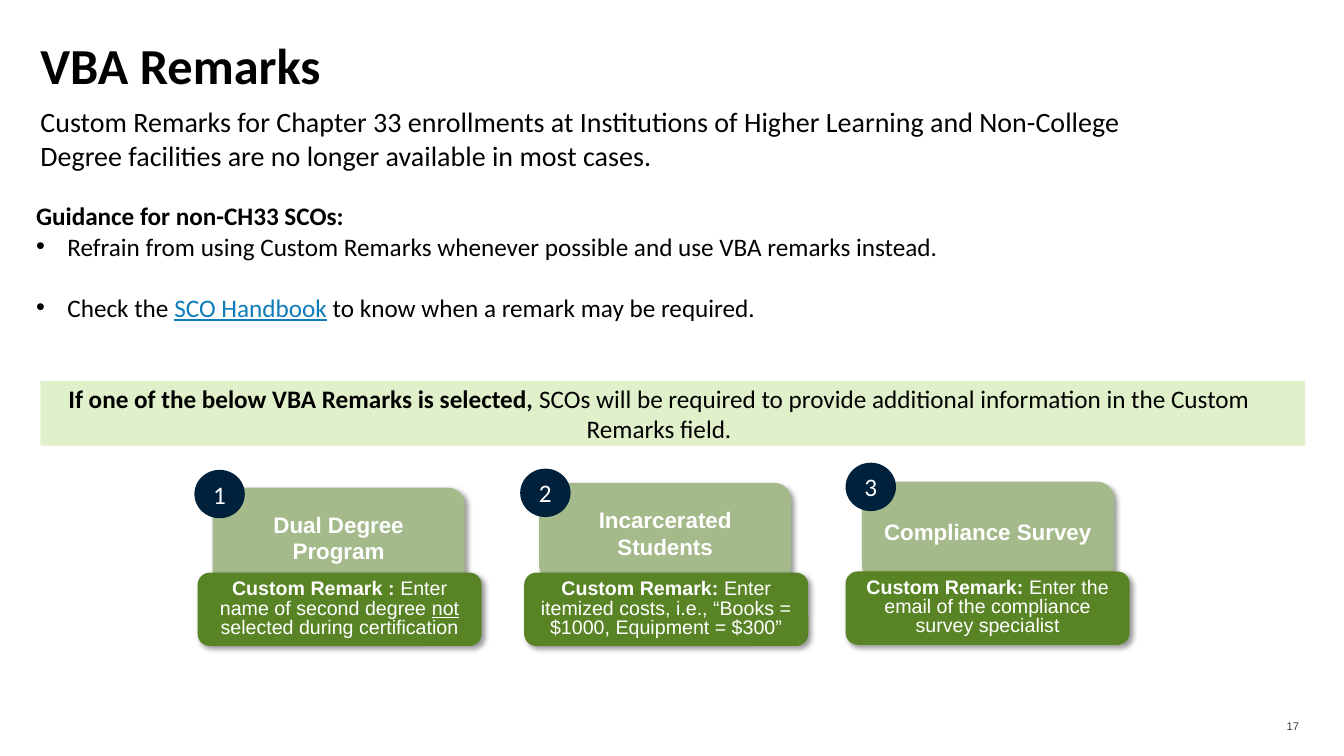
from lxml import etree
from pptx import Presentation
from pptx.dml.color import RGBColor
from pptx.enum.shapes import MSO_SHAPE
from pptx.enum.text import MSO_ANCHOR, PP_ALIGN
from pptx.oxml.ns import qn
from pptx.util import Cm, Pt

RECT, ROUNDED = MSO_SHAPE.RECTANGLE, MSO_SHAPE.ROUNDED_RECTANGLE
BADGE = MSO_SHAPE.FLOWCHART_CONNECTOR
LEFT, CENTER, RIGHT = PP_ALIGN.LEFT, PP_ALIGN.CENTER, PP_ALIGN.RIGHT
TOP, MIDDLE = MSO_ANCHOR.TOP, MSO_ANCHOR.MIDDLE

COLORS = {
    "black": "000000", "white": "FFFFFF", "link": "0E7BBA", "banner": "DFF0CA",
    "heading": "A4BA8A", "remark": "598426", "badge": "00213C",
}
BOLD = {"bold": True}
UNDERLINE = {"underline": True}
LINK = {"underline": True, "color": "link"}

HEADING_SIZE, REMARK_SIZE, BADGE_SIZE = (6.35, 2.51), (7.16, 1.85), (1.27, 1.22)

# number, heading, remark runs, then left and top of heading, remark and badge
CARDS = [
    ("1", "Dual Degree Program",
     [("Custom Remark : ", BOLD), ("Enter name of second degree ", {}),
      ("not", UNDERLINE), (" selected during certification", {})],
     (5.36, 12.29), (4.98, 14.43), (4.9, 11.84)),
    ("2", "Incarcerated Students",
     [("Custom Remark: ", BOLD),
      ("Enter itemized costs, i.e., “Books = $1000, Equipment = $300”", {})],
     (13.59, 12.17), (13.21, 14.43), (13.11, 11.81)),
    ("3", "Compliance Survey",
     [("Custom Remark: ", BOLD),
      ("Enter the email of the compliance survey specialist", {})],
     (21.72, 12.14), (21.31, 14.4), (21.31, 11.66)),
]


def rgb(name):
    return RGBColor.from_string(COLORS[name])


def add_runs(paragraph, runs, **base):
    """Append (text, format) runs; each format overrides the base format."""
    for text, changes in runs:
        run = paragraph.add_run()
        run.text = text
        style = {**base, **changes}
        run.font.color.rgb = rgb(style.pop("color"))
        for attribute, value in style.items():
            setattr(run.font, attribute, value)


def format_paragraph(paragraph, **values):
    for attribute, value in values.items():
        setattr(paragraph, attribute, value)


def add_bullet(paragraph):
    properties = paragraph._p.get_or_add_pPr()
    properties.set("marL", str(Cm(0.79)))
    properties.set("indent", str(-Cm(0.79)))
    etree.SubElement(properties, qn("a:buFont"), typeface="Arial")
    etree.SubElement(properties, qn("a:buChar"), char="•")


def add_text(slide, box, anchor=TOP, insets=(0.25, 0.13)):
    frame = slide.shapes.add_textbox(*map(Cm, box)).text_frame
    frame.word_wrap = True
    frame.vertical_anchor = anchor
    frame.margin_left = frame.margin_right = Cm(insets[0])
    frame.margin_top = frame.margin_bottom = Cm(insets[1])
    return frame


def add_filled(slide, kind, place, size, color):
    shape = slide.shapes.add_shape(kind, *map(Cm, place + size))
    shape.shadow.inherit = False
    shape.fill.solid()
    shape.fill.fore_color.rgb = rgb(color)
    shape.line.fill.background()
    shape.text_frame.vertical_anchor = MIDDLE
    return shape


def add_shadow(shape):
    effects = shape._element.spPr.find(qn("a:effectLst"))
    shadow = etree.SubElement(effects, qn("a:outerShdw"), blurRad=str(Pt(4)),
                              dist=str(Pt(3)), dir="2700000", algn="tl",
                              rotWithShape="0")
    color = etree.SubElement(shadow, qn("a:srgbClr"), val=COLORS["black"])
    etree.SubElement(color, qn("a:alpha"), val="40000")


def add_card(slide, number, title, remark_runs, title_at, remark_at, badge_at):
    heading = add_filled(slide, ROUNDED, title_at, HEADING_SIZE, "heading")
    remark = add_filled(slide, ROUNDED, remark_at, REMARK_SIZE, "remark")
    badge = add_filled(slide, BADGE, badge_at, BADGE_SIZE, "badge")
    add_shadow(heading)
    add_shadow(remark)
    for part, runs, size, font in (
        (heading, [(title, BOLD)], 16, "Arial"),
        (remark, remark_runs, 14, "Arial"),
        (badge, [(number, {})], 18, "Calibri"),
    ):
        paragraph = part.text_frame.paragraphs[0]
        paragraph.alignment = CENTER
        add_runs(paragraph, runs, size=Pt(size), name=font, color="white")
    remark.text_frame.paragraphs[0].line_spacing = 0.81


def add_header(slide):
    title = add_text(slide, (1.02, 0.94, 27.94, 1.63), MIDDLE, (0, 0)).paragraphs[0]
    format_paragraph(title, alignment=LEFT, line_spacing=0.8)
    add_runs(title, [("VBA Remarks", BOLD)],
             size=Pt(36), name="Calibri", color="black")
    subtitle = add_text(slide, (1.02, 2.34, 29.24, 2.29), MIDDLE, (0, 0.13)).paragraphs[0]
    format_paragraph(subtitle, alignment=LEFT, space_after=Pt(2))
    add_runs(subtitle, [("Custom Remarks for Chapter 33 enrollments at Institutions of "
                         "Higher Learning and Non-College Degree facilities are no "
                         "longer available in most cases.", {})],
             size=Pt(20), name="Calibri", color="black")


def add_guidance(slide):
    body = {"size": Pt(18), "name": "Calibri", "color": "black"}
    frame = add_text(slide, (0.66, 4.93, 26.39, 4.11))
    add_runs(frame.paragraphs[0], [("Guidance for non-CH33 SCOs:", BOLD)], **body)
    advice = [
        (0, [("Refrain from using Custom Remarks whenever possible and use "
              "VBA remarks instead.", {})]),
        (22, [("Check the ", {}), ("SCO Handbook", LINK),
              (" to know when a remark may be required.", {})]),
    ]
    for gap, runs in advice:
        paragraph = frame.add_paragraph()
        add_bullet(paragraph)
        paragraph.space_before = Pt(gap)
        add_runs(paragraph, runs, **body)


def add_banner(slide):
    add_filled(slide, RECT, (1.02, 9.6), (31.88, 1.63), "banner")
    paragraph = add_text(slide, (0.48, 9.53, 32.26, 1.8)).paragraphs[0]
    paragraph.alignment = CENTER
    add_runs(paragraph, [
        ("If one of the below VBA Remarks is selected, ", BOLD),
        ("SCOs will be required to provide additional information in the "
         "Custom Remarks field.", {}),
    ], size=Pt(18), name="Calibri", color="black")


def add_page_number(slide):
    paragraph = add_text(slide, (31.67, 18.01, 1.07, 0.58), MIDDLE, (0, 0)).paragraphs[0]
    format_paragraph(paragraph, alignment=RIGHT, space_after=Pt(12))
    add_runs(paragraph, [("17", {})], size=Pt(8), name="Arial", color="black")
    color = paragraph._p.find(".//" + qn("a:srgbClr"))
    etree.SubElement(color, qn("a:alpha"), val="75000")


def main():
    deck = Presentation()
    deck.slide_width, deck.slide_height = Cm(33.87), Cm(19.05)
    slide = deck.slides.add_slide(deck.slide_layouts[6])
    add_page_number(slide)
    add_header(slide)
    add_guidance(slide)
    add_banner(slide)
    for card in CARDS:
        add_card(slide, *card)
    deck.save("out.pptx")


if __name__ == "__main__":
    main()
